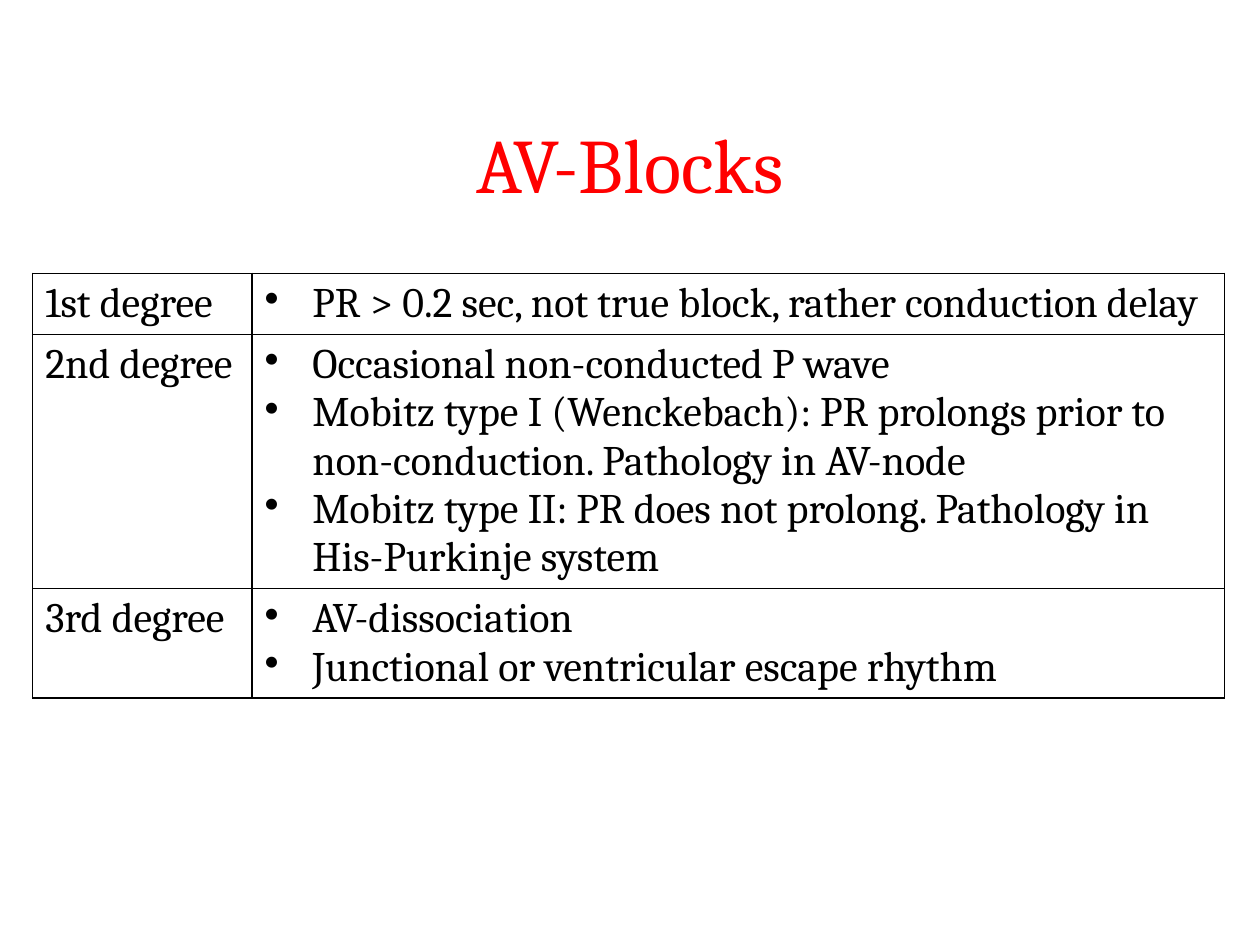
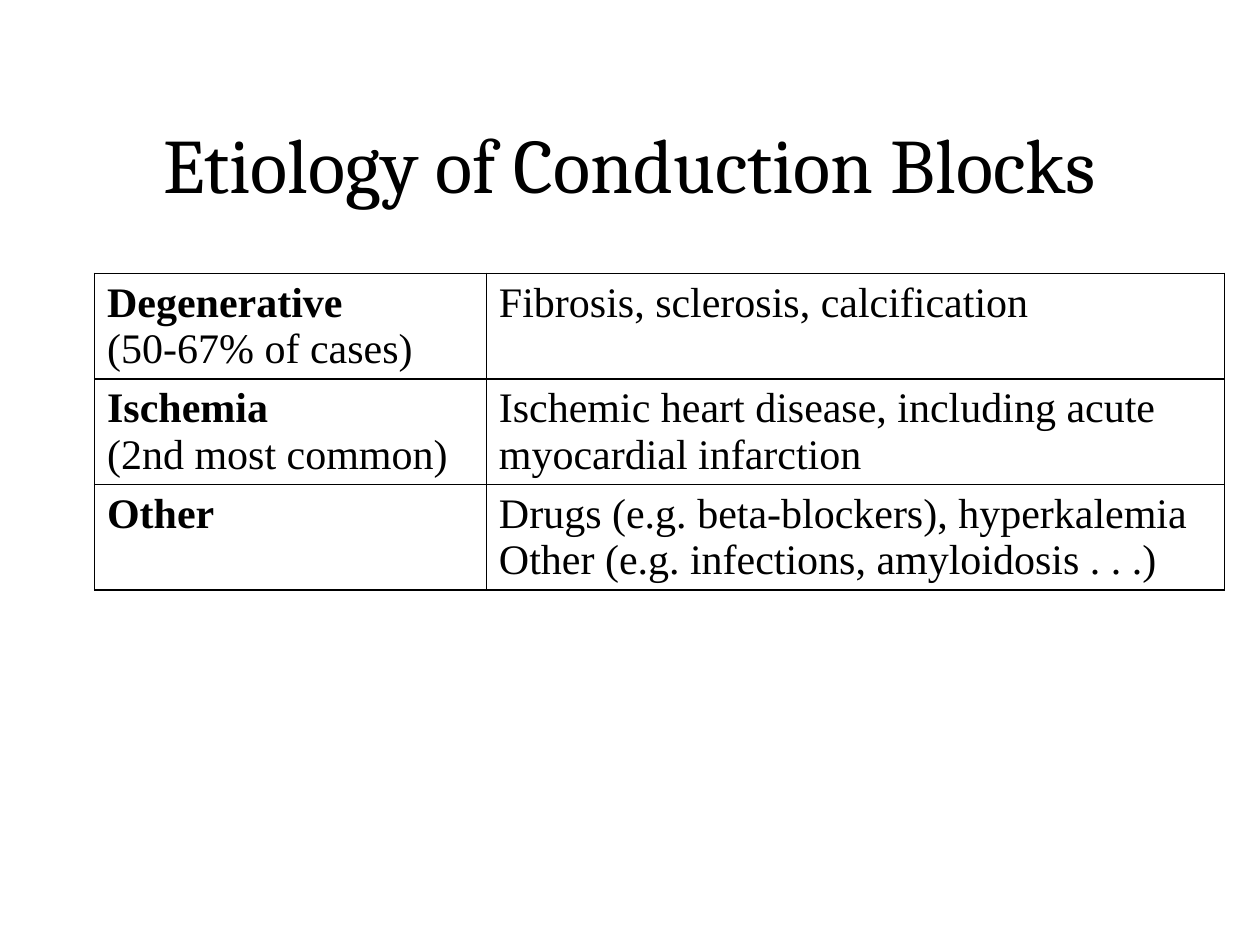
from pptx import Presentation
from pptx import util as u
from pptx.dml.color import RGBColor
from pptx.enum import text
from pptx.oxml.ns import qn
from lxml import etree

COLORS = {"accent": "FF0000", "ink": "000000", "paper": "FFFFFF"}
SERIF, TIMES = "Cambria", "Times New Roman"
TITLE_BOX = (0.75, 0.67, 8.5, 1.25)
TABLE_TOP = 2.17
BULLET_INDENT = 0.38
BORDER_PT = 1


def rgb(name):
    return RGBColor.from_string(COLORS[name])


def write(p, words, size=24, font=SERIF, color="ink", bold=False, bullet=False, align=None):
    if bullet:
        pPr = p._p.get_or_add_pPr()
        indent = u.Inches(BULLET_INDENT)
        pPr.set("marL", str(indent))
        pPr.set("indent", str(-indent))
        etree.SubElement(pPr, qn("a:buChar")).set("char", "•")
    if align is not None:
        p.alignment = align
    r = p.add_run()
    r.text = words
    r.font.size, r.font.name, r.font.bold = u.Pt(size), font, bold
    r.font.color.rgb = rgb(color)


def add_borders(cell):
    tcPr = cell._tc.get_or_add_tcPr()
    for side in ("lnL", "lnR", "lnT", "lnB"):
        ln = etree.SubElement(tcPr, qn(f"a:{side}"), w=str(u.Pt(BORDER_PT)))
        fill = etree.SubElement(ln, qn("a:solidFill"))
        etree.SubElement(fill, qn("a:srgbClr"), val=COLORS["ink"])


def add_titled_slide(prs, title, color="ink"):
    s = prs.slides.add_slide(prs.slide_layouts[5])
    s.background.fill.solid()
    s.background.fill.fore_color.rgb = rgb("paper")
    sp = s.shapes.title
    sp.left, sp.top, sp.width, sp.height = map(u.Inches, TITLE_BOX)
    tf = sp.text_frame
    tf.word_wrap = True
    tf.auto_size = text.MSO_AUTO_SIZE.NONE
    tf.vertical_anchor = text.MSO_ANCHOR.MIDDLE
    write(tf.paragraphs[0], title, size=44, color=color, align=text.PP_ALIGN.CENTER)
    return s


def add_grid(s, left, col_widths, row_heights, rows, label_format, detail_format):
    """Rows hold a list of label lines and a list of detail lines."""
    box = (left, TABLE_TOP, sum(col_widths), sum(row_heights))
    table = s.shapes.add_table(len(rows), len(col_widths), *map(u.Inches, box)).table
    table.first_row = table.horz_banding = False
    for col, width in zip(table.columns, col_widths):
        col.width = u.Inches(width)
    for row, height, contents in zip(table.rows, row_heights, rows):
        row.height = u.Inches(height)
        for cell, lines, formats in zip(row.cells, contents, (label_format, detail_format)):
            add_borders(cell)
            cell.fill.background()
            tf = cell.text_frame
            for i, line in enumerate(lines):
                p = tf.add_paragraph() if i else tf.paragraphs[0]
                write(p, line, **formats[min(i, len(formats) - 1)])


def add_av_blocks(prs):
    s = add_titled_slide(prs, "AV-Blocks", color="accent")
    rows = [
        (["1st degree"], ["PR > 0.2 sec, not true block, rather conduction delay"]),
        (["2nd degree"], [
            "Occasional non-conducted P wave",
            "Mobitz type I (Wenckebach): PR prolongs prior to non-conduction. "
            "Pathology in AV-node",
            "Mobitz type II: PR does not prolong. Pathology in His-Purkinje system",
        ]),
        (["3rd degree"], ["AV-dissociation", "Junctional or ventricular escape rhythm"]),
    ]
    add_grid(s, 0.26, (1.74, 7.72), (0.48, 2.01, 0.86), rows, [{}], [{"bullet": True}])


def add_etiology(prs):
    s = add_titled_slide(prs, "Etiology of Conduction Blocks")
    rows = [
        (["Degenerative", "(50-67% of cases)"], ["Fibrosis, sclerosis, calcification"]),
        (["Ischemia", "(2nd most common)"],
         ["Ischemic heart disease, including acute myocardial infarction"]),
        (["Other"], ["Drugs (e.g. beta-blockers), hyperkalemia",
                     "Other (e.g. infections, amyloidosis . . .)"]),
    ]
    plain = {"font": TIMES}
    add_grid(s, 0.75, (3.11, 5.86), (0.83,) * len(rows), rows,
             [{"font": TIMES, "bold": True}, plain], [plain])


def main():
    prs = Presentation()
    prs.slide_width, prs.slide_height = u.Inches(10), u.Inches(7.5)
    add_av_blocks(prs)
    add_etiology(prs)
    prs.save("out.pptx")


if __name__ == "__main__":
    main()
